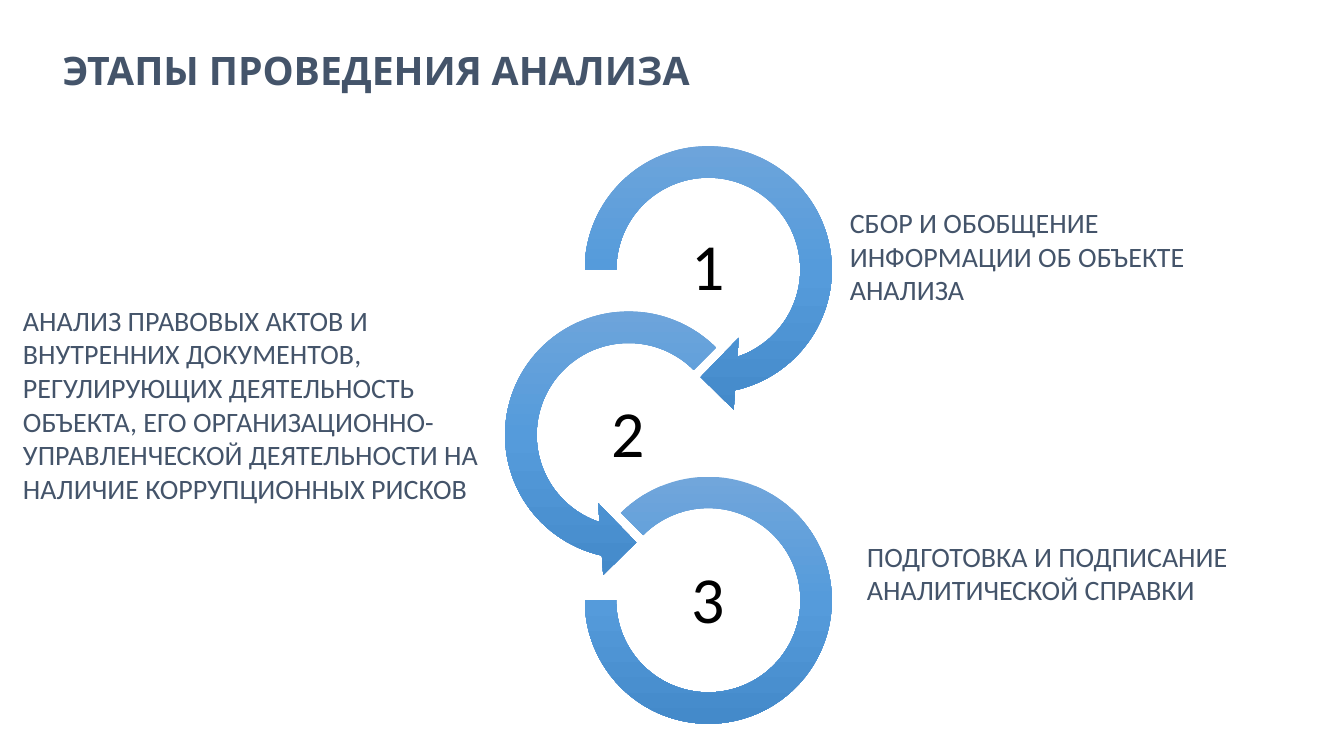
from copy import deepcopy
from dataclasses import dataclass

from pptx import Presentation
from pptx.dml.color import RGBColor
from pptx.enum.shapes import MSO_SHAPE as SHAPE
from pptx.enum.text import MSO_ANCHOR as ANCHOR, MSO_AUTO_SIZE as AUTO, PP_ALIGN as ALIGN
from pptx.oxml.ns import qn
from pptx.slide import Slide
from pptx.text.text import TextFrame
from pptx.util import Emu, Pt

PX = 9144  # EMU per px, 100 px to the inch


@dataclass(frozen=True)
class Theme:
    title_font: str = "Karla"
    body_font: str = "Calibri"
    text: str = "44546A"
    number: str = "000000"
    gradient: tuple[str, ...] = ("71A6DB", "559BDB", "448ACA")
    title_size: int = 28
    number_size: int = 47
    body_size: int = 20


@dataclass(frozen=True)
class Box:
    left: int
    top: int
    width: int
    height: int

    def emu(self) -> tuple[Emu, ...]:
        return tuple(Emu(v * PX) for v in (self.left, self.top, self.width, self.height))


@dataclass(frozen=True)
class Stage:
    shape: SHAPE
    ring: Box
    adjustments: tuple[float, ...]
    number: Box
    caption: Box
    text: str


THEME = Theme()
TITLE = "ЭТАПЫ ПРОВЕДЕНИЯ АНАЛИЗА"
TITLE_BOX = Box(52, 34, 1282, 76)
STAGES = (
    Stage(SHAPE.CIRCULAR_ARROW, Box(560, 125, 285, 285), (0.11, 11.42, 45, 108, 0.125),
          Box(623, 228, 158, 79), Box(833, 199, 442, 111),
          "СБОР И ОБОБЩЕНИЕ ИНФОРМАЦИИ ОБ ОБЪЕКТЕ АНАЛИЗА"),
    Stage(SHAPE.LEFT_CIRCULAR_ARROW, Box(481, 289, 285, 285), (0.11, 11.42, 63, 189, 0.125),
          Box(544, 393, 158, 79), Box(13, 296, 507, 347),
          "АНАЛИЗ ПРАВОВЫХ АКТОВ И ВНУТРЕННИХ ДОКУМЕНТОВ, РЕГУЛИРУЮЩИХ "
          "ДЕЯТЕЛЬНОСТЬ ОБЪЕКТА, ЕГО ОРГАНИЗАЦИОННО-УПРАВЛЕНЧЕСКОЙ "
          "ДЕЯТЕЛЬНОСТИ НА НАЛИЧИЕ КОРРУПЦИОННЫХ РИСКОВ"),
    Stage(SHAPE.BLOCK_ARC, Box(580, 473, 245, 245), (135, 108, 0.127),
          Box(623, 558, 158, 79), Box(850, 530, 442, 111),
          "ПОДГОТОВКА И ПОДПИСАНИЕ АНАЛИТИЧЕСКОЙ СПРАВКИ"),
)


def write(tf: TextFrame, text: str, font: str, size: int, color: str,
          bold: bool = False, align: ALIGN = ALIGN.LEFT,
          anchor: ANCHOR = ANCHOR.TOP, spacing: float = 1.0) -> None:
    tf.word_wrap = True
    tf.auto_size = AUTO.NONE
    tf.vertical_anchor = anchor
    p = tf.paragraphs[0]
    p.text = text
    p.alignment = align
    p.line_spacing = spacing
    p.font.name = font
    p.font.size = Pt(size)
    p.font.bold = bold
    p.font.color.rgb = RGBColor.from_string(color)


def add_title(s: Slide) -> None:
    sp = s.shapes.title
    sp.left, sp.top, sp.width, sp.height = TITLE_BOX.emu()
    write(sp.text_frame, TITLE, THEME.title_font, THEME.title_size, THEME.text,
          bold=True, anchor=ANCHOR.MIDDLE, spacing=0.9)


def add_ring(s: Slide, stage: Stage) -> None:
    sp = s.shapes.add_shape(stage.shape, *stage.ring.emu())
    for i, value in enumerate(stage.adjustments):
        sp.adjustments[i] = value
    sp.shadow.inherit = False
    sp.line.fill.background()
    sp.fill.gradient()
    sp.fill.gradient_angle = 270
    stops = sp._element.spPr.find(f".//{qn('a:gsLst')}")
    stops.append(deepcopy(stops[-1]))
    last = len(THEME.gradient) - 1
    for i, (stop, color) in enumerate(zip(sp.fill.gradient_stops, THEME.gradient)):
        stop.position = i / last
        stop.color.rgb = RGBColor.from_string(color)


def add_number(s: Slide, stage: Stage, number: int) -> None:
    tf = s.shapes.add_textbox(*stage.number.emu()).text_frame
    tf.margin_left = tf.margin_right = tf.margin_top = tf.margin_bottom = Emu(3 * PX)
    write(tf, str(number), THEME.body_font, THEME.number_size, THEME.number,
          align=ALIGN.CENTER, anchor=ANCHOR.MIDDLE, spacing=0.9)


def add_caption(s: Slide, stage: Stage) -> None:
    tf = s.shapes.add_textbox(*stage.caption.emu()).text_frame
    write(tf, stage.text, THEME.body_font, THEME.body_size, THEME.text)


def main() -> None:
    prs = Presentation()
    prs.slide_width, prs.slide_height = Emu(1333 * PX), Emu(750 * PX)
    s = prs.slides.add_slide(prs.slide_layouts.get_by_name("Title Only"))
    add_title(s)
    for number, stage in enumerate(STAGES, start=1):
        add_ring(s, stage)
        add_number(s, stage, number)
    for stage in STAGES:
        add_caption(s, stage)
    prs.save("out.pptx")


if __name__ == "__main__":
    main()
